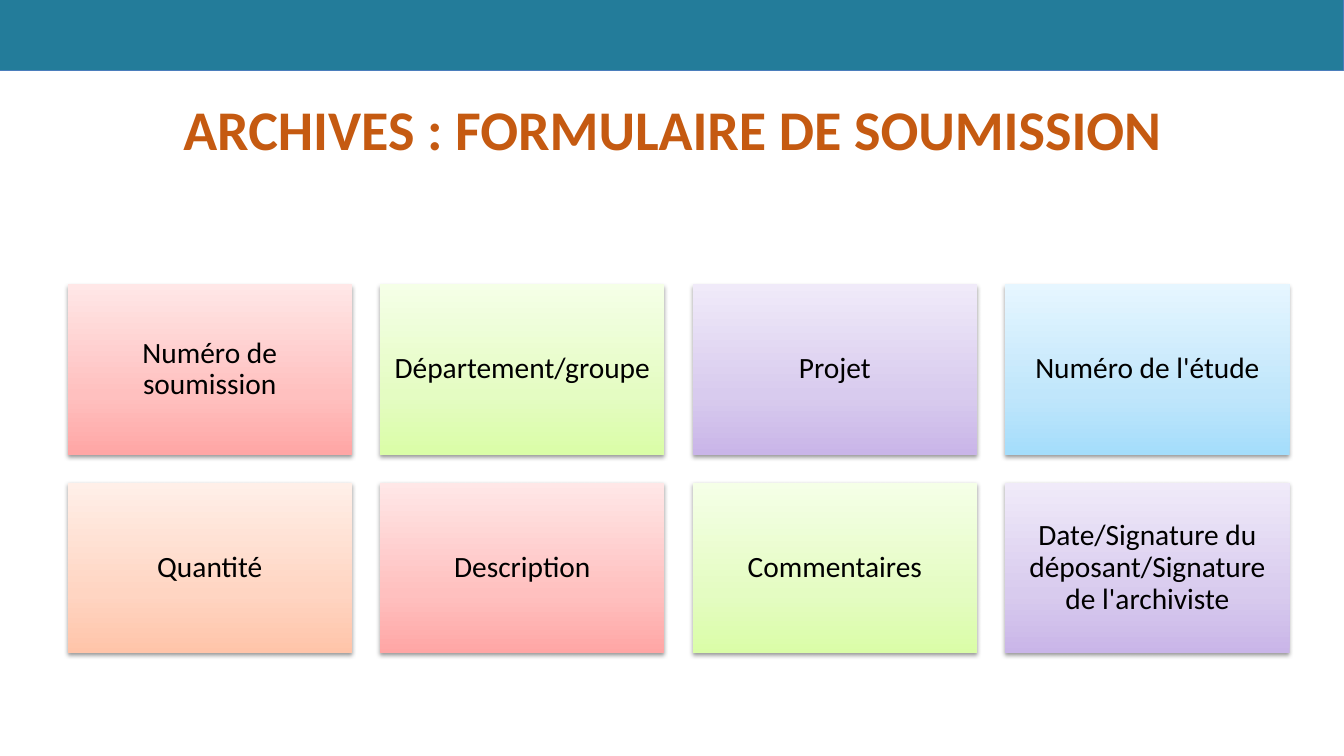
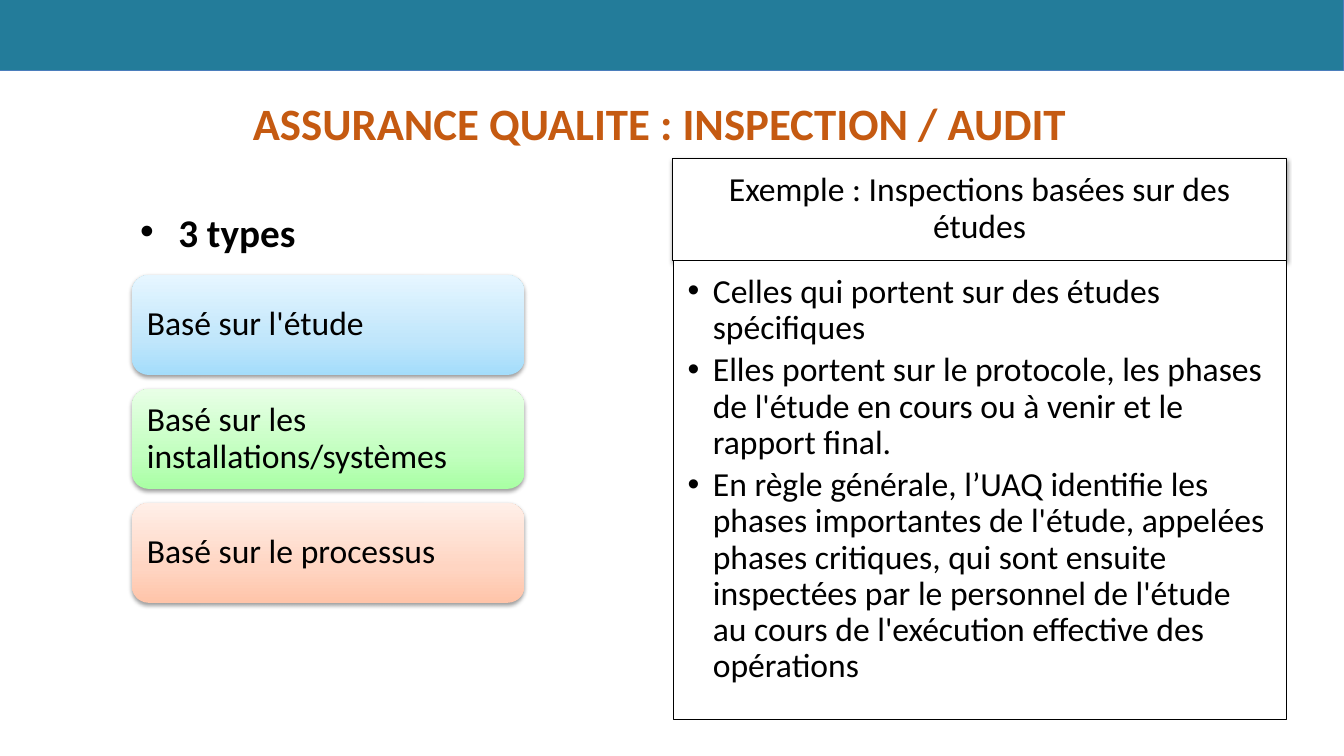
from dataclasses import dataclass

from lxml import etree
from pptx import Presentation
from pptx import util as u
from pptx.dml import color
from pptx.enum import shapes, text
from pptx.oxml import ns
from pptx.shapes.autoshape import Shape
from pptx.slide import Slide

FONT = "Calibri"
COLOURS = {
    "band": "237C9A",
    "band_line": "4B7EBC",
    "title": "C55A11",
    "black": "000000",
    "white": "FFFFFF",
}
GRADIENTS = {
    "rose": ("FFA6A5", "FFC0BF", "FFE7E7"),
    "lime": ("DAFDA7", "E4FCC2", "F5FFE7"),
    "violet": ("C9B5E8", "D8CBEE", "F0EAF9"),
    "sky": ("A4DDFB", "C0E6FB", "E6F6FF"),
    "peach": ("FFC4A9", "FFD5C2", "FFEFE8"),
    "green": ("A9FFA4", "C2FFBF", "E8FFE6"),
}
STOPS = (0, 35000, 100000)
RECTANGLE = shapes.MSO_SHAPE.RECTANGLE
ROUNDED = shapes.MSO_SHAPE.ROUNDED_RECTANGLE
LEFT, CENTER = text.PP_ALIGN.LEFT, text.PP_ALIGN.CENTER
TOP, MIDDLE = text.MSO_ANCHOR.TOP, text.MSO_ANCHOR.MIDDLE


@dataclass(frozen=True)
class Area:
    left: float
    top: float
    width: float
    height: float

    def lengths(self) -> list[u.Length]:
        return [u.Inches(n) for n in (self.left, self.top, self.width, self.height)]


@dataclass(frozen=True)
class Style:
    size: float
    bold: bool = False
    colour: str = "black"
    align: text.PP_ALIGN = LEFT
    anchor: text.MSO_ANCHOR = TOP
    margins: tuple[float, float, float, float] = (0.1, 0.05, 0.1, 0)
    line_spacing: float = 1
    space_after: float = 0
    bullet_indent: tuple[float, float] | None = None


@dataclass(frozen=True)
class Card:
    label: str
    gradient: str


FIELD_STYLE = Style(21, align=CENTER, anchor=MIDDLE, margins=(0.09,) * 4, line_spacing=0.9)
TYPE_STYLE = Style(24, anchor=MIDDLE, margins=(0.1,) * 4, line_spacing=0.9)
LEAD_STYLE = Style(28, bold=True, line_spacing=1.5, bullet_indent=(0.88, 0.38))
HEADER_STYLE = Style(24, align=CENTER, anchor=MIDDLE,
                     margins=(0.19, 0.11, 0.19, 0.11), line_spacing=0.9)
DETAIL_STYLE = Style(24, margins=(0.14, 0.14, 0.19, 0.21), line_spacing=0.9,
                     space_after=4.3, bullet_indent=(0.25, 0.25))

FIELDS = [
    Card("Numéro de soumission", "rose"),
    Card("Département/groupe", "lime"),
    Card("Projet", "violet"),
    Card("Numéro de l'étude", "sky"),
    Card("Quantité", "peach"),
    Card("Description", "rose"),
    Card("Commentaires", "lime"),
    Card("Date/Signature du déposant/Signature de l'archiviste", "violet"),
]
INSPECTION_TYPES = [
    Card("Basé sur l'étude", "sky"),
    Card("Basé sur les installations/systèmes", "green"),
    Card("Basé sur le processus", "peach"),
]
DETAILS = [
    "Celles qui portent sur des études spécifiques",
    "Elles portent sur le protocole, les phases de l'étude en cours ou à venir "
    "et le rapport final.",
    "En règle générale, l’UAQ identifie les phases importantes de l'étude, "
    "appelées phases critiques, qui sont ensuite inspectées par le personnel de "
    "l'étude au cours de l'exécution effective des opérations",
]


def rgb(name: str) -> color.RGBColor:
    return color.RGBColor.from_string(COLOURS[name])


def write(box: Shape, lines: list[str], style: Style) -> None:
    frame = box.text_frame
    frame.word_wrap = True
    frame.vertical_anchor = style.anchor
    (frame.margin_left, frame.margin_top,
     frame.margin_right, frame.margin_bottom) = [u.Inches(n) for n in style.margins]
    for index, line in enumerate(lines):
        para = frame.add_paragraph() if index else frame.paragraphs[0]
        para.text = line
        para.alignment = style.align
        para.line_spacing = style.line_spacing
        para.space_after = u.Pt(style.space_after)
        if style.bullet_indent:
            margin, hanging = style.bullet_indent
            properties = para._p.get_or_add_pPr()
            properties.set("marL", str(u.Inches(margin)))
            properties.set("indent", str(-u.Inches(hanging)))
            etree.SubElement(properties, ns.qn("a:buFont"), typeface="Arial")
            etree.SubElement(properties, ns.qn("a:buChar"), char="•")
        para.font.name = FONT
        para.font.size = u.Pt(style.size)
        para.font.bold = style.bold
        para.font.color.rgb = rgb(style.colour)


def add_text(page: Slide, area: Area, lines: list[str], style: Style) -> None:
    write(page.shapes.add_textbox(*area.lengths()), lines, style)


def add_box(page: Slide, area: Area, fill: str, line: str,
            kind: shapes.MSO_SHAPE = RECTANGLE) -> Shape:
    box = page.shapes.add_shape(kind, *area.lengths())
    box.shadow.inherit = False
    box.fill.solid()
    box.fill.fore_color.rgb = rgb(fill)
    box.line.color.rgb = rgb(line)
    box.line.width = u.Pt(0.75)
    return box


def add_shadow(box: Shape) -> None:
    effects = box._element.spPr.find(ns.qn("a:effectLst"))
    shadow = etree.SubElement(effects, ns.qn("a:outerShdw"), blurRad="40000",
                              dist="20000", dir="5400000", rotWithShape="0")
    tint = etree.SubElement(shadow, ns.qn("a:srgbClr"), val=COLOURS["black"])
    etree.SubElement(tint, ns.qn("a:alpha"), val="38000")


def add_card(page: Slide, area: Area, card: Card, style: Style,
             kind: shapes.MSO_SHAPE) -> None:
    box = add_box(page, area, "white", "white", kind)
    box.line.fill.background()
    box.fill.gradient()
    box.fill.gradient_angle = 90
    stops = box._element.spPr.find(ns.qn("a:gradFill")).find(ns.qn("a:gsLst"))
    for stop in list(stops):
        stops.remove(stop)
    for position, value in zip(STOPS, GRADIENTS[card.gradient]):
        stop = etree.SubElement(stops, ns.qn("a:gs"), pos=str(position))
        etree.SubElement(stop, ns.qn("a:srgbClr"), val=value)
    add_shadow(box)
    write(box, [card.label], style)


def add_cards(page: Slide, cards: list[Card], first: Area, columns: int, gap: float,
              style: Style, kind: shapes.MSO_SHAPE) -> None:
    for index, card in enumerate(cards):
        row, column = divmod(index, columns)
        area = Area(first.left + column * (first.width + gap),
                    first.top + row * (first.height + gap), first.width, first.height)
        add_card(page, area, card, style, kind)


def add_page(deck: Presentation, title: str, area: Area, size: float) -> Slide:
    page = deck.slides.add_slide(deck.slide_layouts[6])
    add_box(page, Area(0, 0, 13.33, 0.7), "band", "band_line")
    add_text(page, area, [title], Style(size, bold=True, colour="title", align=CENTER))
    return page


def add_form_page(deck: Presentation) -> None:
    page = add_page(deck, "ARCHIVES : FORMULAIRE DE SOUMISSION",
                    Area(0.67, 0.89, 12, 0.65), 40)
    add_cards(page, FIELDS, Area(0.67, 2.82, 2.82, 1.69), 4, 0.28, FIELD_STYLE, RECTANGLE)


def add_audit_page(deck: Presentation) -> None:
    page = add_page(deck, "ASSURANCE QUALITE : INSPECTION / AUDIT",
                    Area(1.31, 0.9, 10.47, 0.65), 32)
    add_text(page, Area(0.79, 1.78, 2.95, 1.2), ["3 types"], LEAD_STYLE)
    add_cards(page, INSPECTION_TYPES, Area(1.31, 2.73, 3.89, 0.99), 1, 0.14,
              TYPE_STYLE, ROUNDED)
    header = add_box(page, Area(6.67, 1.57, 6.09, 1.01), "white", "black")
    add_shadow(header)
    write(header, ["Exemple : Inspections basées sur des études"], HEADER_STYLE)
    details = add_box(page, Area(6.68, 2.58, 6.08, 4.56), "white", "black")
    write(details, DETAILS, DETAIL_STYLE)


def main() -> None:
    deck = Presentation()
    deck.slide_width, deck.slide_height = u.Inches(13.33), u.Inches(7.5)
    add_form_page(deck)
    add_audit_page(deck)
    deck.save("out.pptx")


if __name__ == "__main__":
    main()
